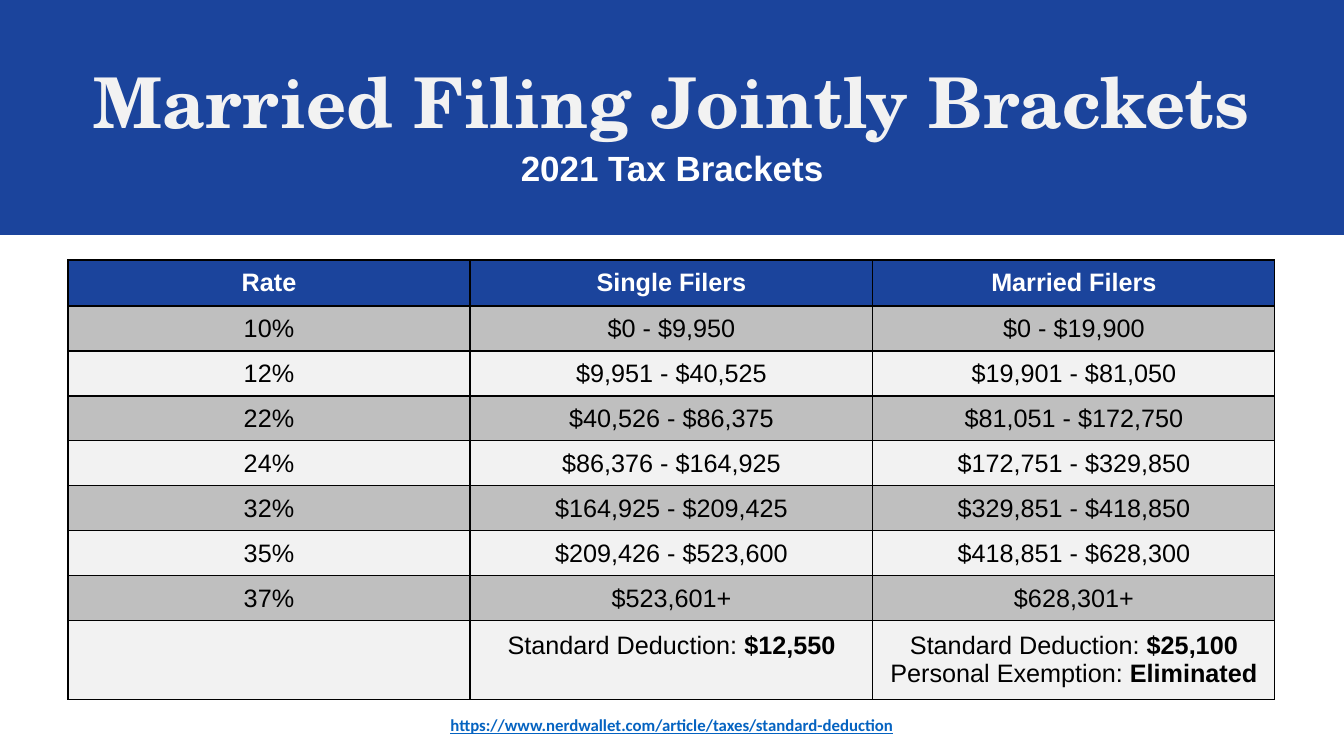
from pptx import Presentation, util as u
from pptx.dml.color import RGBColor
from pptx.enum import shapes, text
from pptx.oxml.ns import qn
from lxml import etree

HUES = {"blue": "1B449C", "grey": "BFBFBF", "pale": "F2F2F2",
        "white": "FFFFFF", "black": "000000", "link": "0563C1"}
WIDE, HIGH = 1344, 756
BAND = 235
LABELS = [
    ("Married Filing Jointly Brackets", (0, 54, WIDE, 95), "TeX Gyre Schola", 50, "pale", False),
    ("https://www.nerdwallet.com/article/taxes/standard-deduction",
     (0, 710, WIDE, 50), "Calibri", 12, "link", True),
    ("2021 Tax Brackets", (121, 142, 1102, 52), "Arial", 25, "white", False),
]
HEAD = ("Rate", "Single Filers", "Married Filers")
RATES = [
    ("10%", "$0 - $9,950", "$0 - $19,900"),
    ("12%", "$9,951 - $40,525", "$19,901 - $81,050"),
    ("22%", "$40,526 - $86,375", "$81,051 - $172,750"),
    ("24%", "$86,376 - $164,925", "$172,751 - $329,850"),
    ("32%", "$164,925 - $209,425", "$329,851 - $418,850"),
    ("35%", "$209,426 - $523,600", "$418,851 - $628,300"),
    ("37%", "$523,601+", "$628,301+"),
]
NOTES = [
    [],
    [("Standard Deduction: ", "$12,550")],
    [("Standard Deduction: ", "$25,100"), ("Personal Exemption: ", "Eliminated")],
]
LEFT, TOP = 68, 260
COLS = (402, 403, 402)
ROWS = [46] + [45] * len(RATES) + [79]
PAD_X, PAD_Y, NOTE_Y = 8, 4, 11


def px(n):
    return u.Emu(round(n * 914400 / 100.8))


def hue(name):
    return RGBColor.from_string(HUES[name])


def style(para, face, size, tone, bold=None):
    para.alignment = text.PP_ALIGN.CENTER
    font = para.font
    font.name, font.size, font.bold = face, u.Pt(size), bold
    font.color.rgb = hue(tone)


def paint(cell, tone):
    props = cell._tc.get_or_add_tcPr()
    for side in ("lnL", "lnR", "lnT", "lnB"):
        line = etree.SubElement(props, qn("a:" + side), w=str(u.Pt(1)))
        fill = etree.SubElement(line, qn("a:solidFill"))
        etree.SubElement(fill, qn("a:srgbClr"), val=HUES["black"])
    cell.fill.solid()
    cell.fill.fore_color.rgb = hue(tone)
    cell.vertical_anchor = text.MSO_ANCHOR.MIDDLE
    cell.margin_left = cell.margin_right = px(PAD_X)
    cell.margin_top = cell.margin_bottom = px(PAD_Y)


def add_band(slide):
    band = slide.shapes.add_shape(shapes.MSO_SHAPE.RECTANGLE, 0, 0, px(WIDE), px(BAND))
    band.shadow.inherit = False
    band.fill.solid()
    band.fill.fore_color.rgb = hue("blue")
    band.line.fill.background()


def add_label(slide, words, box, face, size, tone, lined):
    frame = slide.shapes.add_textbox(*map(px, box)).text_frame
    frame.word_wrap = True
    frame.auto_size = text.MSO_AUTO_SIZE.SHAPE_TO_FIT_TEXT
    para = frame.paragraphs[0]
    para.text = words
    style(para, face, size, tone, True)
    if lined:
        para.font.underline = True


def add_rates(slide):
    table = slide.shapes.add_table(len(ROWS), len(COLS), px(LEFT), px(TOP),
                                   px(sum(COLS)), px(sum(ROWS))).table
    for col, wide in zip(table.columns, COLS):
        col.width = px(wide)
    for row, high in zip(table.rows, ROWS):
        row.height = px(high)

    for r, line in enumerate([HEAD] + RATES):
        fill = "blue" if r == 0 else "grey" if r % 2 else "pale"
        for c, words in enumerate(line):
            cell = table.cell(r, c)
            paint(cell, fill)
            para = cell.text_frame.paragraphs[0]
            para.text = words
            style(para, "Arial", 18, "black" if r else "white", r == 0)

    for c, lines in enumerate(NOTES):
        cell = table.cell(len(ROWS) - 1, c)
        paint(cell, "pale")
        cell.vertical_anchor = text.MSO_ANCHOR.TOP
        cell.margin_top = px(NOTE_Y)
        frame = cell.text_frame
        for n, pair in enumerate(lines):
            para = frame.add_paragraph() if n else frame.paragraphs[0]
            style(para, "Arial", 18, "black")
            for words, bold in zip(pair, (False, True)):
                run = para.add_run()
                run.text = words
                run.font.bold = bold


def main():
    deck = Presentation()
    deck.slide_width, deck.slide_height = px(WIDE), px(HIGH)
    slide = deck.slides.add_slide(deck.slide_layouts[6])
    add_band(slide)
    for label in LABELS:
        add_label(slide, *label)
    add_rates(slide)
    deck.save("out.pptx")


if __name__ == "__main__":
    main()
